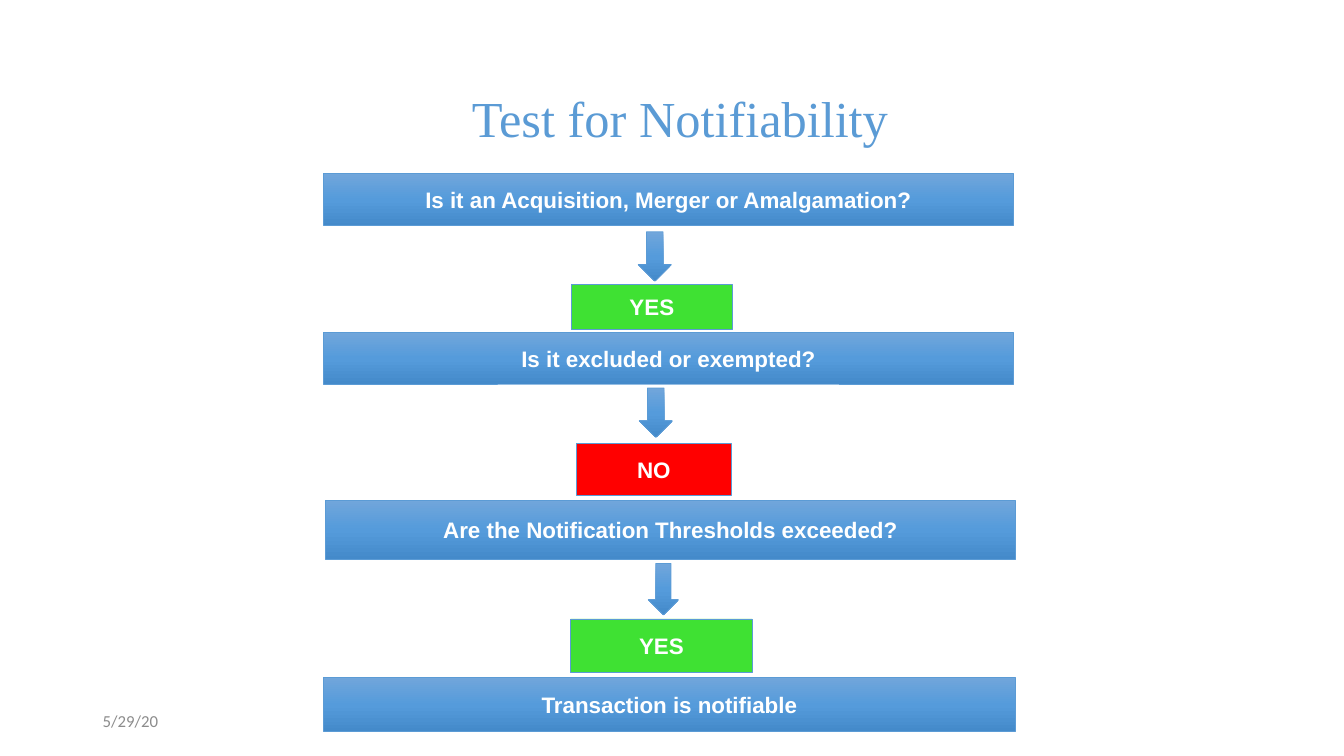
import copy

import pptx
import pptx.dml.color
import pptx.enum.shapes
import pptx.enum.text
import pptx.oxml.ns
import pptx.util

Inches = pptx.util.Inches
Pt = pptx.util.Pt
RGBColor = pptx.dml.color.RGBColor
MSO_SHAPE = pptx.enum.shapes.MSO_SHAPE
PP_ALIGN = pptx.enum.text.PP_ALIGN
MSO_ANCHOR = pptx.enum.text.MSO_ANCHOR
MSO_AUTO_SIZE = pptx.enum.text.MSO_AUTO_SIZE

BLUE = RGBColor(0x5B, 0x9B, 0xD5)
GRADIENT = [
    RGBColor(0x71, 0xA6, 0xDB),
    RGBColor(0x55, 0x9B, 0xDB),
    RGBColor(0x44, 0x8A, 0xCA),
]
GREEN = RGBColor(0x3F, 0xE1, 0x33)
RED = RGBColor(0xFF, 0x00, 0x00)
WHITE = RGBColor(0xFF, 0xFF, 0xFF)
GREY = RGBColor(0x8C, 0x8C, 0x8C)

QUESTIONS = [
    ("Is it an Acquisition, Merger or Amalgamation?", (3.21, 1.72, 6.84, 0.52)),
    ("Is it excluded or exempted?", (3.21, 3.3, 6.84, 0.51)),
    ("Are the Notification Thresholds exceeded?", (3.23, 4.96, 6.84, 0.59)),
    ("Transaction is notifiable", (3.21, 6.72, 6.86, 0.54)),
]
ARROWS = [
    (6.33, 2.3, 0.33, 0.49),
    (6.34, 3.85, 0.33, 0.49),
    (6.43, 5.59, 0.3, 0.51),
]
ANSWERS = [
    ("YES", GREEN, (5.67, 2.82, 1.59, 0.45)),
    ("NO", RED, (5.72, 4.4, 1.53, 0.51)),
    ("YES", GREEN, (5.66, 6.14, 1.8, 0.53)),
]


class FlowSlide:
    def __init__(self, slide):
        self.slide = slide

    def add_words(self, frame, text, font, size, color, align, bold=False):
        paragraph = frame.paragraphs[0]
        paragraph.alignment = align
        run = paragraph.add_run()
        run.text = text
        run.font.name = font
        run.font.size = Pt(size)
        run.font.bold = bold
        run.font.color.rgb = color

    def title(self, text, box):
        heading = self.slide.shapes.title
        heading.left, heading.top, heading.width, heading.height = map(Inches, box)
        frame = heading.text_frame
        frame.word_wrap = False
        frame.auto_size = MSO_AUTO_SIZE.SHAPE_TO_FIT_TEXT
        frame.vertical_anchor = MSO_ANCHOR.TOP
        self.add_words(frame, text, "Times New Roman", 36, BLUE, PP_ALIGN.LEFT)

    def label(self, text, box):
        frame = self.slide.shapes.add_textbox(*map(Inches, box)).text_frame
        frame.word_wrap = True
        frame.vertical_anchor = MSO_ANCHOR.MIDDLE
        self.add_words(frame, text, "Calibri", 12, GREY, PP_ALIGN.LEFT)

    def shape(self, preset, box, color=None):
        shape = self.slide.shapes.add_shape(preset, *map(Inches, box))
        shape.shadow.inherit = False
        shape.line.color.rgb = BLUE
        shape.line.width = Pt(0.5)
        if color is None:
            self.shade(shape)
        else:
            shape.fill.solid()
            shape.fill.fore_color.rgb = color
        return shape

    def shade(self, shape):
        shape.fill.gradient()
        shape.fill.gradient_angle = 270
        stop_list = shape._element.spPr.find(".//" + pptx.oxml.ns.qn("a:gsLst"))
        stop_list.insert(1, copy.deepcopy(stop_list[0]))
        for index, stop in enumerate(shape.fill.gradient_stops):
            stop.position = index / 2
            stop.color.rgb = GRADIENT[index]

    def step(self, text, box, color=None):
        frame = self.shape(MSO_SHAPE.RECTANGLE, box, color).text_frame
        frame.word_wrap = True
        frame.vertical_anchor = MSO_ANCHOR.MIDDLE
        self.add_words(frame, text, "Arial", 16, WHITE, PP_ALIGN.CENTER, bold=True)

    def arrow(self, box):
        self.shape(MSO_SHAPE.DOWN_ARROW, box)


def main():
    deck = pptx.Presentation()
    deck.slide_width = Inches(13.33)
    deck.slide_height = Inches(7.5)
    flow = FlowSlide(deck.slides.add_slide(deck.slide_layouts[5]))

    flow.title("Test for Notifiability", (4.58, 0.81, 4.37, 0.71))
    for question, box in QUESTIONS:
        flow.step(question, box)
    for box in ARROWS:
        flow.arrow(box)
    for answer, color, box in ANSWERS:
        flow.step(answer, box, color)
    flow.label("5/29/20", (0.92, 6.95, 3, 0.4))

    deck.save("out.pptx")


if __name__ == "__main__":
    main()
